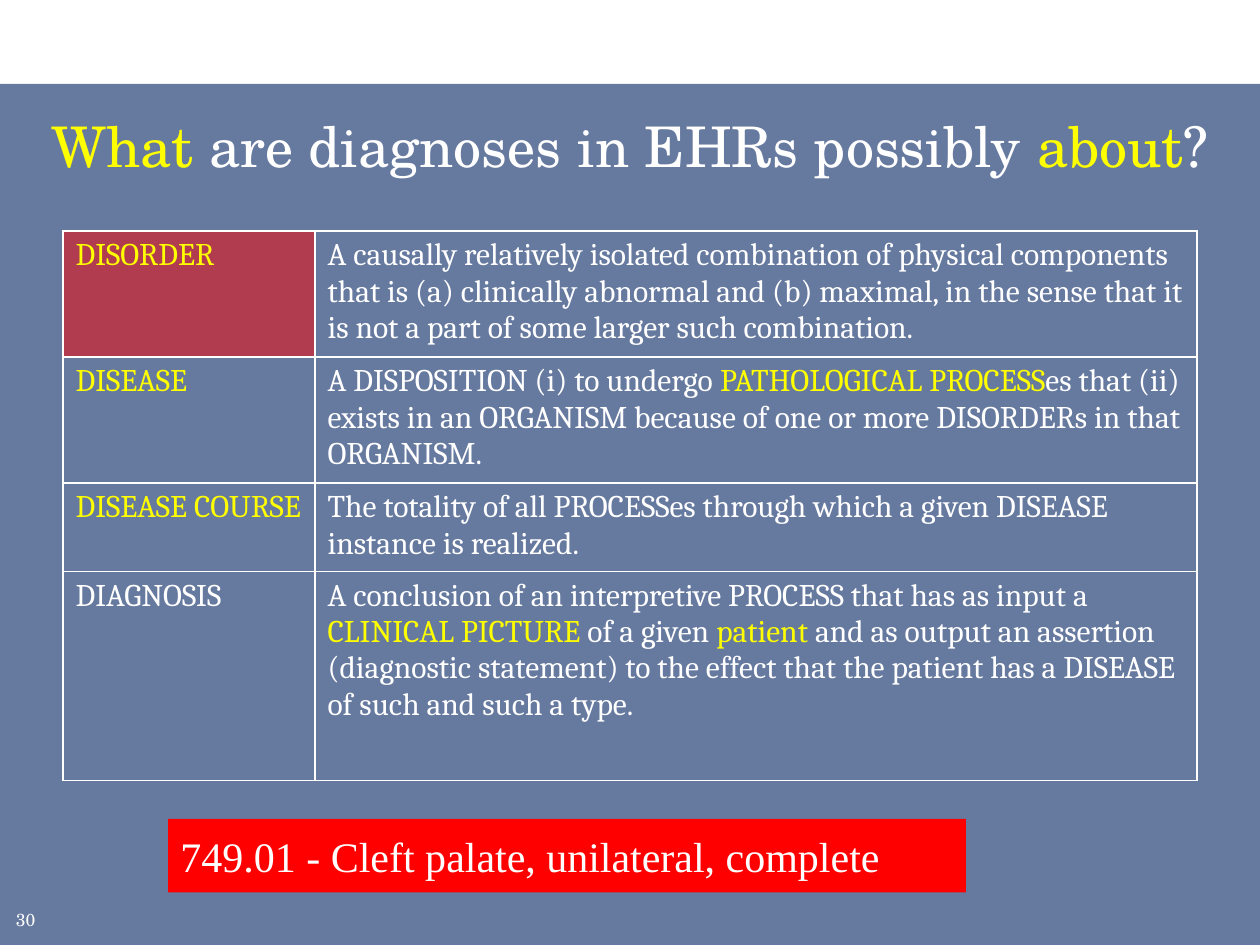
from dataclasses import dataclass

from lxml.etree import SubElement
from pptx import Presentation
from pptx.dml.color import RGBColor
from pptx.enum.shapes import MSO_SHAPE
from pptx.enum.text import MSO_ANCHOR, PP_ALIGN
from pptx.oxml.ns import qn
from pptx.shapes.autoshape import Shape
from pptx.slide import Slide
from pptx.table import _Cell
from pptx.text.text import _Paragraph
from pptx.util import Pt

WHITE = RGBColor(0xFF, 0xFF, 0xFF)
YELLOW = RGBColor(0xFF, 0xFF, 0x00)
RED = RGBColor(0xFF, 0x00, 0x00)
NAVY = RGBColor(0x00, 0x20, 0x60)
HEADING_FONT = "TeX Gyre Schola"
TABLE_FONT = "Cambria"
CODE_FONT = "Times New Roman"


@dataclass(frozen=True)
class Box:
    left: float
    top: float
    width: float
    height: float

    def lengths(self) -> tuple[Pt, Pt, Pt, Pt]:
        return Pt(self.left), Pt(self.top), Pt(self.width), Pt(self.height)


@dataclass(frozen=True)
class Span:
    text: str
    color: RGBColor = WHITE


@dataclass(frozen=True)
class Definition:
    term: Span
    meaning: tuple[Span, ...]
    height: float


TITLE = (
    Span("What", YELLOW),
    Span(" are diagnoses in EHRs possibly "),
    Span("about", YELLOW),
    Span("?"),
)

DEFINITIONS = (
    Definition(
        Span("DISORDER", YELLOW),
        (Span("A causally relatively isolated combination of physical components "
              "that is (a) clinically abnormal and (b) maximal, in the sense that "
              "it is not a part of some larger such combination."),),
        71.3,
    ),
    Definition(
        Span("DISEASE", YELLOW),
        (Span("A DISPOSITION (i) to undergo "),
         Span("PATHOLOGICAL PROCESS", YELLOW),
         Span("es that (ii) exists in an ORGANISM because of one or more "
              "DISORDERs in that ORGANISM.")),
        72,
    ),
    Definition(
        Span("DISEASE COURSE", YELLOW),
        (Span("The totality of all PROCESSes through which a given DISEASE "
              "instance is realized."),),
        49.7,
    ),
    Definition(
        Span("DIAGNOSIS"),
        (Span("A conclusion of an interpretive PROCESS that has as input a "),
         Span("CLINICAL PICTURE ", YELLOW),
         Span("of a given "),
         Span("patient", YELLOW),
         Span(" and as output an assertion (diagnostic statement) to the effect "
              "that the patient has a DISEASE of such and such a type.")),
        119.5,
    ),
)


def write_spans(paragraph: _Paragraph, spans: tuple[Span, ...], font: str, size: float) -> None:
    for span in spans:
        run = paragraph.add_run()
        run.text = span.text
        run.font.name = font
        run.font.size = Pt(size)
        run.font.color.rgb = span.color


def add_panel(slide: Slide, box: Box, color: RGBColor, opacity: int = 100) -> Shape:
    panel = slide.shapes.add_shape(MSO_SHAPE.RECTANGLE, *box.lengths())
    panel.shadow.inherit = False
    panel.fill.solid()
    panel.fill.fore_color.rgb = color
    panel.line.fill.background()
    if opacity < 100:
        tint = panel.fill._xPr.find(qn("a:solidFill"))[0]
        SubElement(tint, qn("a:alpha"), val=str(opacity * 1000))
    return panel


def add_label(slide: Slide, box: Box, spans: tuple[Span, ...], size: float,
              align: PP_ALIGN = PP_ALIGN.LEFT) -> None:
    frame = slide.shapes.add_textbox(*box.lengths()).text_frame
    frame.word_wrap = True
    frame.paragraphs[0].alignment = align
    write_spans(frame.paragraphs[0], spans, HEADING_FONT, size)


def fill_cell(cell: _Cell, spans: tuple[Span, ...]) -> None:
    write_spans(cell.text_frame.paragraphs[0], spans, TABLE_FONT, 18)
    properties = cell._tc.get_or_add_tcPr()
    for side in ("lnL", "lnR", "lnT", "lnB"):
        border = SubElement(properties, qn(f"a:{side}"), w=str(Pt(1)))
        paint = SubElement(border, qn("a:solidFill"))
        SubElement(paint, qn("a:srgbClr"), val=str(WHITE))
    cell.fill.background()


def add_definitions(slide: Slide, box: Box, columns: tuple[float, ...]) -> None:
    table = slide.shapes.add_table(len(DEFINITIONS), len(columns), *box.lengths()).table
    table.first_row = False
    table.horz_banding = False
    for column, width in zip(table.columns, columns):
        column.width = Pt(width)
    for index, definition in enumerate(DEFINITIONS):
        table.rows[index].height = Pt(definition.height)
        fill_cell(table.cell(index, 0), (definition.term,))
        fill_cell(table.cell(index, 1), definition.meaning)


def main() -> None:
    presentation = Presentation()
    presentation.slide_width = Pt(720)
    presentation.slide_height = Pt(540)
    slide = presentation.slides.add_slide(presentation.slide_layouts[6])

    add_panel(slide, Box(0, 48, 720, 492), NAVY, 60)
    add_label(slide, Box(2, 516, 28, 18), (Span("30"),), 10)
    add_panel(slide, Box(36, 132, 144, 72), RED, 50)
    add_label(slide, Box(18, 60, 684, 60), TITLE, 32, PP_ALIGN.CENTER)
    table_height = sum(definition.height for definition in DEFINITIONS)
    add_definitions(slide, Box(36, 132, 648, table_height), (144, 504))

    diagnosis_code = add_panel(slide, Box(96, 468, 456, 42), RED).text_frame
    diagnosis_code.word_wrap = True
    diagnosis_code.vertical_anchor = MSO_ANCHOR.MIDDLE
    diagnosis_code.paragraphs[0].alignment = PP_ALIGN.LEFT
    write_spans(diagnosis_code.paragraphs[0],
                (Span("749.01 - Cleft palate, unilateral, complete"),), CODE_FONT, 24)

    presentation.save("out.pptx")


if __name__ == "__main__":
    main()
